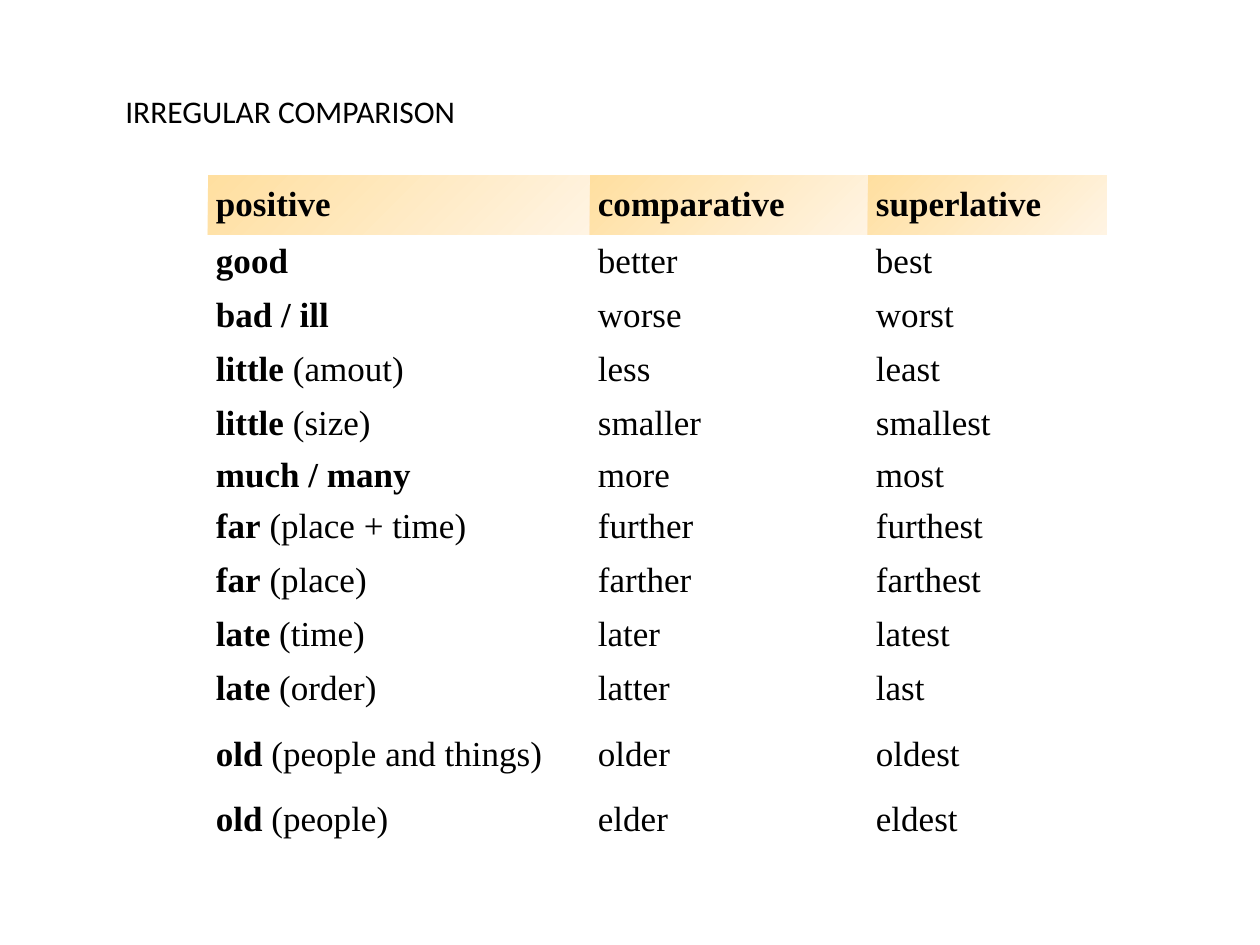
import pptx
import pptx.dml.color
import pptx.enum.text
import pptx.oxml.ns
import pptx.util

PX = 914400 / 126
THEME = {
    "ink": pptx.dml.color.RGBColor.from_string("000000"),
    "header_start": pptx.dml.color.RGBColor.from_string("FFDFA0"),
    "header_end": pptx.dml.color.RGBColor.from_string("FFF4E3"),
    "title_font": "Calibri",
    "title_size": 18,
    "table_font": "Times New Roman",
    "table_size": 20,
}
PLAIN_TABLE_STYLE = "{2D5ABB26-0587-4C30-8999-92F81FD0307C}"  # no fill, no grid
COLUMN_WIDTHS = [382, 278, 239]
ROW_HEIGHTS = [60] + [54] * 4 + [49] + [54] * 4 + [77, 54]
HEADINGS = ["positive", "comparative", "superlative"]
# adjective, note on its use, comparative, superlative
ADJECTIVES = [
    ("good", "", "better", "best"),
    ("bad / ill", "", "worse", "worst"),
    ("little", " (amout)", "less", "least"),
    ("little", " (size)", "smaller", "smallest"),
    ("much / many", "", "more", "most"),
    ("far", " (place + time)", "further", "furthest"),
    ("far", " (place)", "farther", "farthest"),
    ("late", " (time)", "later", "latest"),
    ("late", " (order)", "latter", "last"),
    ("old", " (people and things)", "older", "oldest"),
    ("old", " (people)", "elder", "eldest"),
]


def px(count):
    """Turn pixels into EMU."""
    return pptx.util.Emu(round(count * PX))


def add_span(para, text, kind, bold=False):
    """Add a run in the theme's title or table type."""
    span = para.add_run()
    span.text = text
    span.font.name = THEME[kind + "_font"]
    span.font.size = pptx.util.Pt(THEME[kind + "_size"])
    span.font.color.rgb = THEME["ink"]
    span.font.bold = bold


deck = pptx.Presentation()
deck.slide_width, deck.slide_height = px(1260), px(945)
page = deck.slides.add_slide(deck.slide_layouts[6])

# Table: each cell is a list of (text, bold) spans
rows = [[[(heading, True)] for heading in HEADINGS]]
for adjective, note, comparative, superlative in ADJECTIVES:
    positive = [(adjective, True)] + ([(note, False)] if note else [])
    rows.append([positive, [(comparative, False)], [(superlative, False)]])

table = page.shapes.add_table(
    len(rows), len(HEADINGS), px(208), px(175),
    px(sum(COLUMN_WIDTHS)), px(sum(ROW_HEIGHTS))).table
table.horz_banding = False
style_id = table._tbl.tblPr.find(pptx.oxml.ns.qn("a:tableStyleId"))
style_id.text = PLAIN_TABLE_STYLE
for column, width in zip(table.columns, COLUMN_WIDTHS):
    column.width = px(width)

for row_index, (row, height) in enumerate(zip(rows, ROW_HEIGHTS)):
    table.rows[row_index].height = px(height)
    for column_index, spans in enumerate(row):
        cell = table.cell(row_index, column_index)
        cell.margin_left = cell.margin_right = px(8)
        cell.margin_top = cell.margin_bottom = px(4)
        cell.vertical_anchor = pptx.enum.text.MSO_ANCHOR.MIDDLE
        if row_index == 0:
            cell.fill.gradient()
            cell.fill.gradient_angle = 315
            start, end = cell.fill.gradient_stops
            start.color.rgb = THEME["header_start"]
            end.color.rgb = THEME["header_end"]
        else:
            cell.fill.background()
        for text, bold in spans:
            add_span(cell.text_frame.paragraphs[0], text, "table", bold)

# Title
title_box = page.shapes.add_textbox(px(113), px(86), px(1032), px(59))
title_box.text_frame.word_wrap = True
add_span(title_box.text_frame.paragraphs[0], "IRREGULAR COMPARISON", "title")

deck.save("out.pptx")
